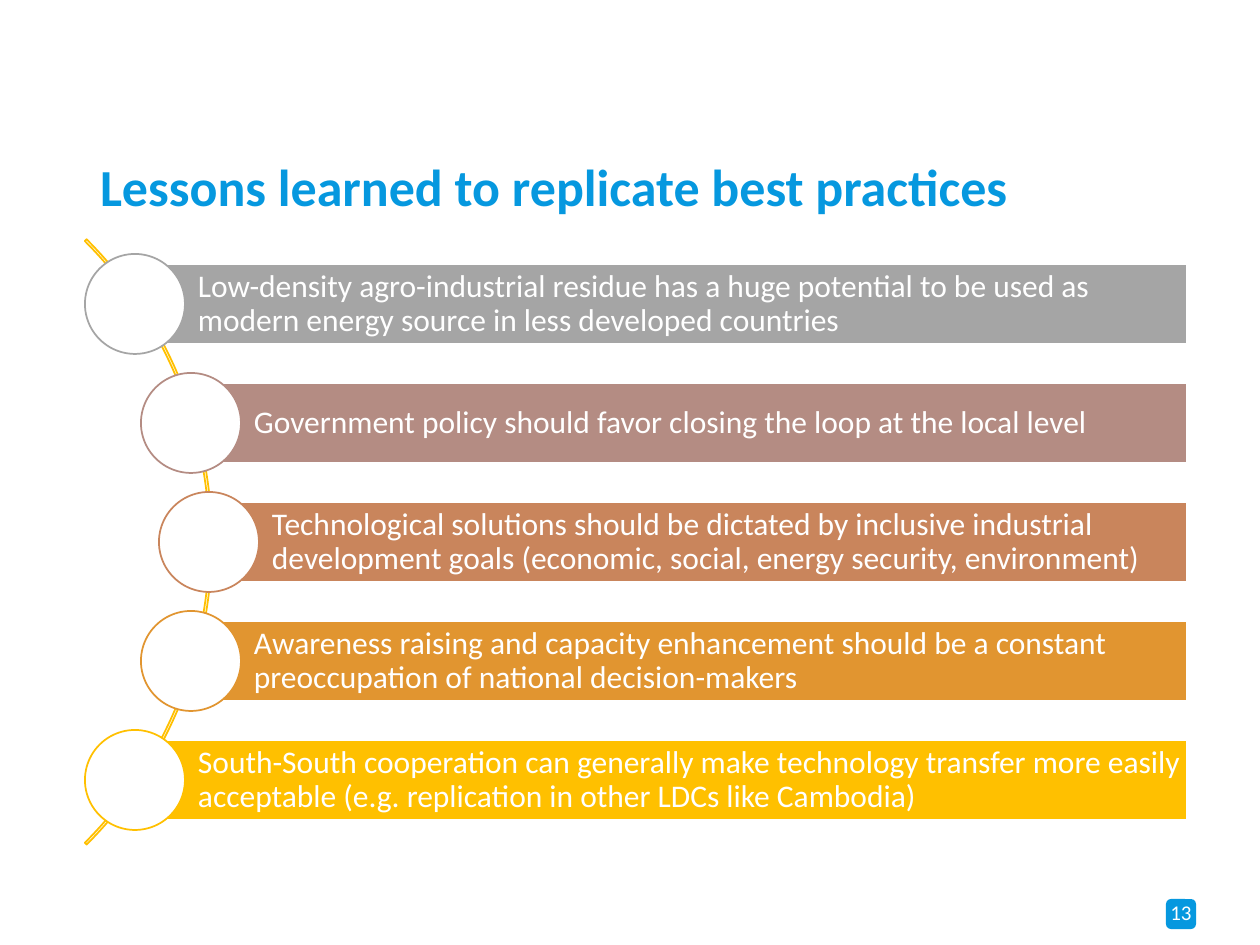
from dataclasses import dataclass

from pptx import Presentation
from pptx.dml.color import RGBColor
from pptx.enum.shapes import MSO_SHAPE as Preset
from pptx.enum.text import MSO_ANCHOR as Anchor, PP_ALIGN as Align
from pptx.util import Emu, Pt

PX_PER_INCH = 126
FONT = "Calibri"
BLUE = RGBColor(0x06, 0x98, 0xDF)
WHITE = RGBColor(0xFF, 0xFF, 0xFF)
GREY = RGBColor(0xA5, 0xA5, 0xA5)
MAUVE = RGBColor(0xB4, 0x8C, 0x83)
COPPER = RGBColor(0xC9, 0x85, 0x5C)
ORANGE = RGBColor(0xE1, 0x95, 0x30)
GOLD = RGBColor(0xFF, 0xC0, 0x00)

FIRST_CENTRE_Y, PITCH = 304, 119
BAR_HEIGHT, BAR_RIGHT = 79, 1187
CIRCLE_SIZE = 100
ARC_CENTRE_X, ARC_SIZE = -216, 856


@dataclass
class Lesson:
    centre_x: int
    color: RGBColor
    text: str


LESSONS = [
    Lesson(135, GREY, "Low-density agro-industrial residue has a huge potential to be "
           "used as modern energy source in less developed countries"),
    Lesson(191, MAUVE, "Government policy should favor closing the loop at the local level"),
    Lesson(209, COPPER, "Technological solutions should be dictated by inclusive industrial "
           "development goals (economic, social, energy security, environment)"),
    Lesson(191, ORANGE, "Awareness raising and capacity enhancement should be a constant "
           "preoccupation of national decision-makers"),
    Lesson(135, GOLD, "South-South cooperation can generally make technology transfer more "
           "easily acceptable (e.g. replication in other LDCs like Cambodia)"),
]


def px(length: float) -> Emu:
    return Emu(round(length * 914400 / PX_PER_INCH))


def add_preset(page, preset, left, top, width, height, fill=None, line=None):
    shape = page.shapes.add_shape(preset, px(left), px(top), px(width), px(height))
    shape.shadow.inherit = False
    if fill is None:
        shape.fill.background()
    else:
        shape.fill.solid()
        shape.fill.fore_color.rgb = fill
    if line is None:
        shape.line.fill.background()
    else:
        shape.line.color.rgb = line
        shape.line.width = Pt(1)
    return shape


def write(shape, text: str, size: float, color: RGBColor, insets: tuple,
          align=Align.LEFT, bold: bool = False) -> None:
    """Fill a shape with one paragraph; insets are left, top, right, bottom in px."""
    frame = shape.text_frame
    frame.word_wrap = True
    frame.vertical_anchor = Anchor.MIDDLE
    (frame.margin_left, frame.margin_top,
     frame.margin_right, frame.margin_bottom) = map(px, insets)
    frame.text = text
    para = frame.paragraphs[0]
    para.alignment = align
    para.line_spacing = 0.9
    font = para.runs[0].font
    font.name, font.size, font.bold = FONT, Pt(size), bold
    font.color.rgb = color


def add_lesson(page, lesson: Lesson, centre_y: int) -> None:
    bar = add_preset(page, Preset.RECTANGLE, lesson.centre_x, centre_y - BAR_HEIGHT / 2,
                     BAR_RIGHT - lesson.centre_x, BAR_HEIGHT, lesson.color, WHITE)
    write(bar, lesson.text, 18, WHITE, (63, 6, 5, 6))
    radius = CIRCLE_SIZE / 2
    add_preset(page, Preset.OVAL, lesson.centre_x - radius, centre_y - radius,
               CIRCLE_SIZE, CIRCLE_SIZE, WHITE, lesson.color)


def add_arc(page) -> None:
    centre_y = FIRST_CENTRE_Y + PITCH * (len(LESSONS) - 1) / 2
    arc = add_preset(page, Preset.BLOCK_ARC, ARC_CENTRE_X - ARC_SIZE / 2,
                     centre_y - ARC_SIZE / 2, ARC_SIZE, ARC_SIZE, line=GOLD)
    # Start and end angles of 315 and 45 degrees, in units of 5/3 degree
    for index, value in enumerate((189, 27, 0.003)):
        arc.adjustments[index] = value


def main() -> None:
    deck = Presentation()
    deck.slide_width, deck.slide_height = px(1260), px(945)
    page = deck.slides.add_slide(deck.slide_layouts[6])

    number = add_preset(page, Preset.ROUNDED_RECTANGLE, 1166, 899, 30, 30, BLUE)
    write(number, "13", 12, WHITE, (0, 0, 0, 0), Align.CENTER)

    title = page.shapes.add_textbox(px(87), px(155), px(1089), px(69))
    write(title, "Lessons learned to replicate best practices", 29.7, BLUE,
          (13, 6, 13, 6), bold=True)

    add_arc(page)
    for row, lesson in enumerate(LESSONS):
        add_lesson(page, lesson, FIRST_CENTRE_Y + row * PITCH)

    deck.save("out.pptx")


if __name__ == "__main__":
    main()
